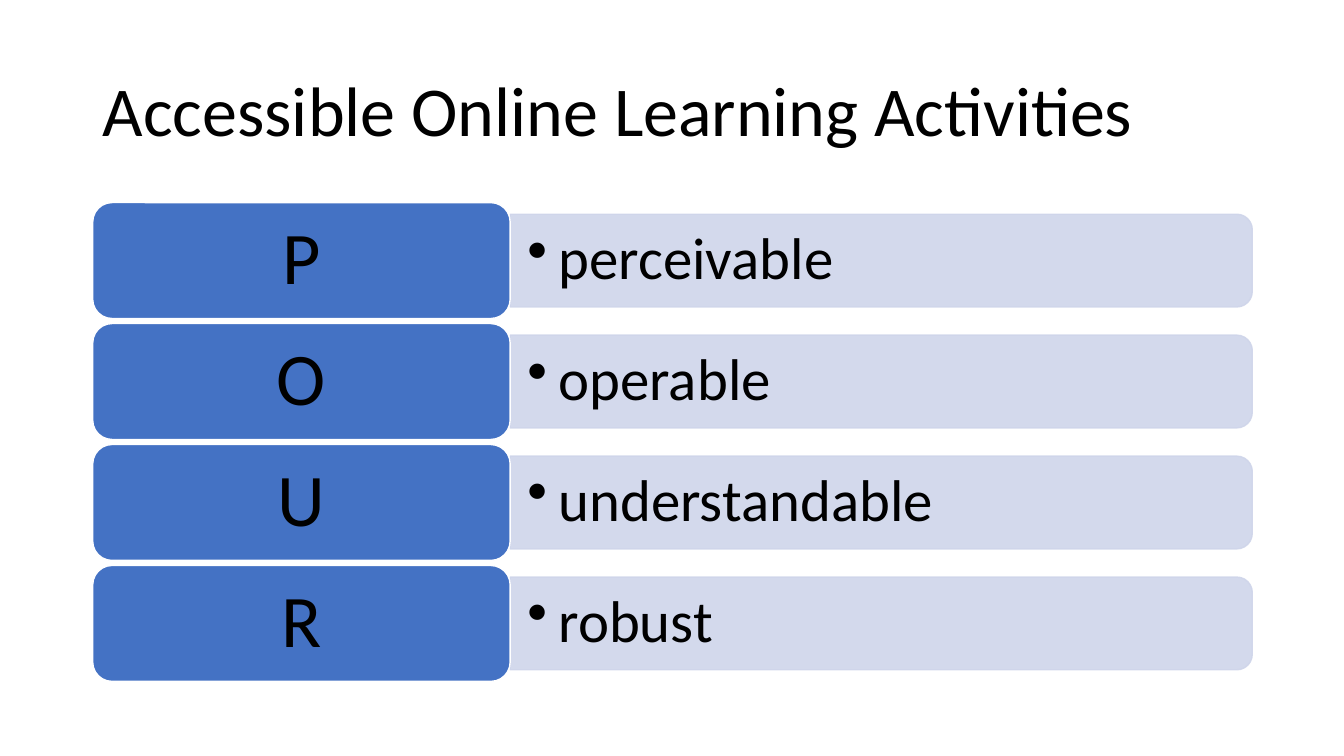
"""Build the slide on accessible online learning activities."""
from lxml.etree import SubElement
from pptx import Presentation
from pptx.dml.color import RGBColor
from pptx.enum.shapes import MSO_SHAPE
from pptx.enum.text import MSO_ANCHOR, MSO_AUTO_SIZE, PP_ALIGN
from pptx.oxml.ns import qn
from pptx.util import Inches, Pt

BLACK = RGBColor(0x00, 0x00, 0x00)
WHITE = RGBColor(0xFF, 0xFF, 0xFF)
BLUE = RGBColor(0x44, 0x72, 0xC4)
PALE = RGBColor(0xCF, 0xD5, 0xEA)
FONT = "Calibri"
LEFT, TOP, STEP = 0.92, 2.01, 1.2
WIDE, HIGH = 4.14, 1.15
BAR_WIDE, BAR_HIGH = 7.36, 0.92
TERMS = ["perceivable", "operable", "understandable", "robust"]


class Deck:
    def __init__(self):
        self.prs = Presentation()
        self.prs.slide_width = Inches(13.33)
        self.prs.slide_height = Inches(7.5)
        self.slide = self.prs.slides.add_slide(self.prs.slide_layouts[5])

    def label(self, shape, text, size, align, inset):
        frame = shape.text_frame
        frame.word_wrap = True
        frame.auto_size = MSO_AUTO_SIZE.NONE
        frame.vertical_anchor = MSO_ANCHOR.MIDDLE
        frame.margin_left = frame.margin_right = Inches(inset)
        frame.margin_top = frame.margin_bottom = Inches(inset / 2)
        para = frame.paragraphs[0]
        para.text = text
        para.alignment = align
        para.line_spacing = 0.9
        para.font.name = FONT
        para.font.size = Pt(size)
        para.font.color.rgb = BLACK
        return para

    def title(self, text):
        shape = self.slide.shapes.title
        shape.left, shape.top = Inches(LEFT), Inches(0.4)
        shape.width, shape.height = Inches(11.5), Inches(1.45)
        self.label(shape, text, 50, PP_ALIGN.LEFT, 0.1)

    def box(self, kind, left, top, wide, high, fill, line):
        shape = self.slide.shapes.add_shape(
            kind, Inches(left), Inches(top), Inches(wide), Inches(high))
        shape.shadow.inherit = False
        shape.fill.solid()
        shape.fill.fore_color.rgb = fill
        shape.line.color.rgb = line
        shape.line.width = Pt(1)
        return shape

    def bar(self, mid):
        left = LEFT + WIDE + (BAR_WIDE - BAR_HIGH) / 2
        shape = self.box(MSO_SHAPE.ROUND_2_SAME_RECTANGLE, left,
                         mid - BAR_WIDE / 2, BAR_HIGH, BAR_WIDE, PALE, PALE)
        shape.rotation = 90
        for color in shape.element.spPr.iter(qn("a:srgbClr")):
            SubElement(color, qn("a:alpha"), val="90000")

    def term(self, text, mid):
        high = 0.83
        shape = self.slide.shapes.add_textbox(
            Inches(LEFT + WIDE), Inches(mid - high / 2),
            Inches(7.32), Inches(high))
        para = self.label(shape, text, 42, PP_ALIGN.LEFT, 0.17)
        para.level = 1
        props = para._p.get_or_add_pPr()
        props.set("marL", str(Inches(0.31)))
        props.set("indent", str(Inches(-0.31)))
        bullet = SubElement(props, qn("a:buChar"), char="•")
        props.find(qn("a:lnSpc")).addnext(bullet)

    def block(self, text, mid):
        shape = self.box(MSO_SHAPE.ROUNDED_RECTANGLE, LEFT, mid - HIGH / 2,
                         WIDE, HIGH, BLUE, WHITE)
        self.label(shape, text, 53, PP_ALIGN.CENTER, 0.22)


def main():
    deck = Deck()
    deck.title("Accessible Online Learning Activities")
    for row, word in enumerate(TERMS):
        mid = TOP + row * STEP + HIGH / 2
        deck.bar(mid)
        deck.term(word, mid)
        deck.block(word[0].upper(), mid)
    deck.prs.save("out.pptx")


if __name__ == "__main__":
    main()
